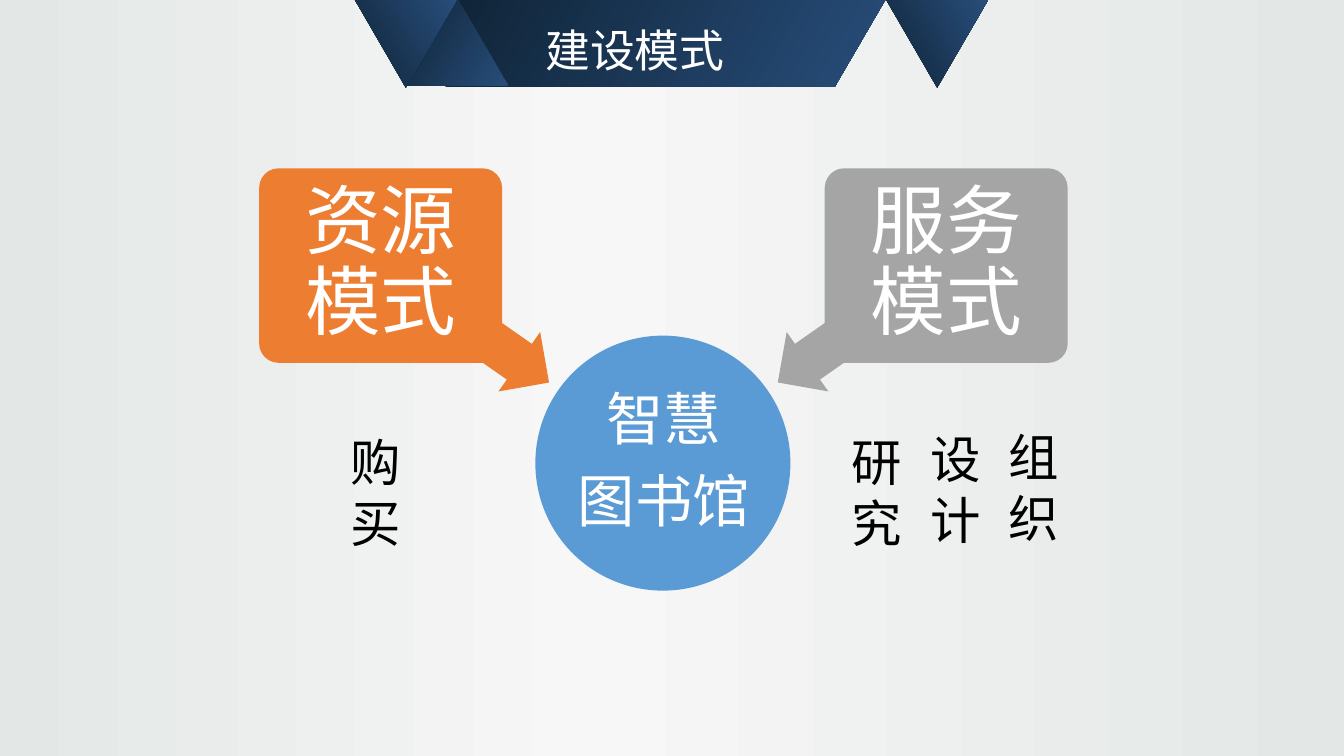
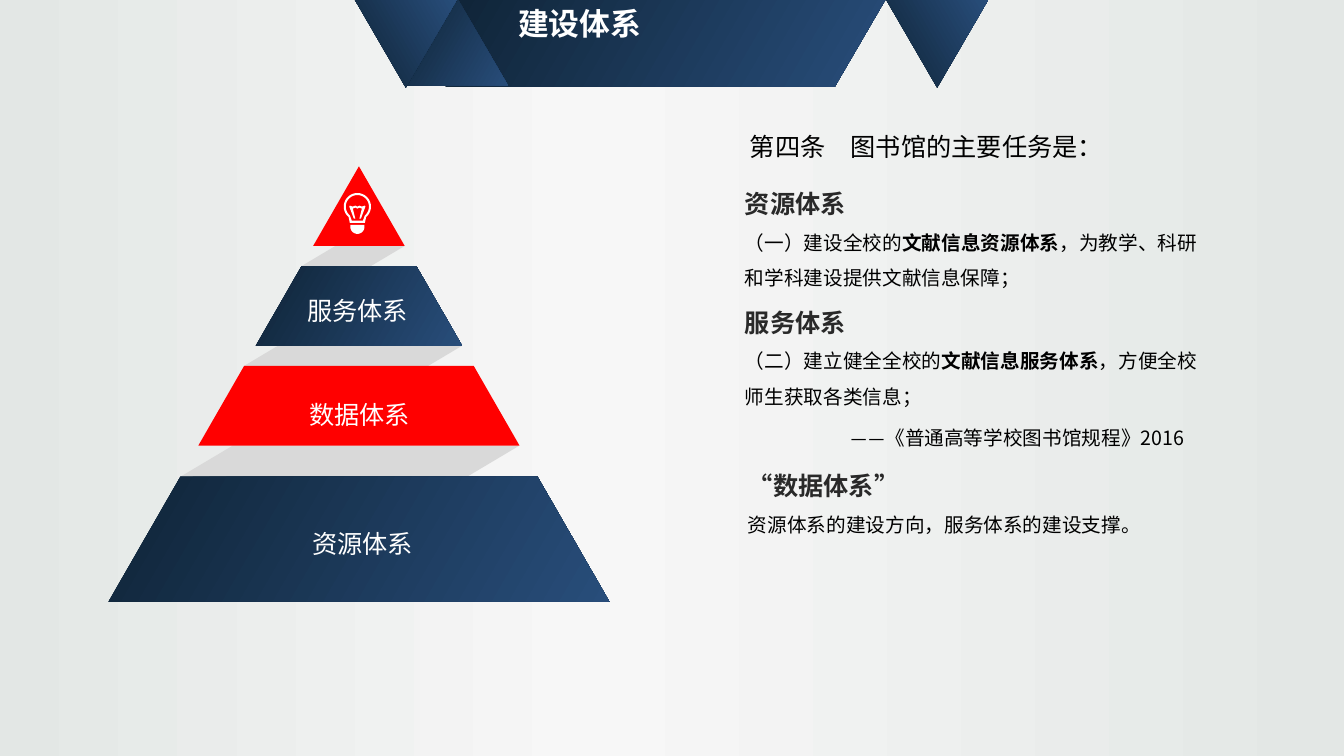
from copy import deepcopy
from dataclasses import dataclass
from math import cos, radians, sin

from lxml import etree
from pptx import Presentation
from pptx import util as u
from pptx.dml.color import RGBColor
from pptx.enum import shapes, text
from pptx.oxml import ns

Point = tuple[float, float]
Box = tuple[float, float, float, float]


@dataclass(frozen=True)
class Theme:
    navy: tuple[str, str] = ("0F2437", "284D7A")
    edge: str = "E3E7E5"
    glow: str = "F7F7F7"
    white: str = "FFFFFF"
    black: str = "000000"
    heading: str = "292929"
    red: str = "FF0000"
    ribbon: str = "D9D9D9"
    blue: str = "5B9BD5"
    orange: str = "ED7D31"
    gray: str = "A5A5A5"
    latin: str = "Arial"
    label_font: str = "Calibri"
    heading_font: str = "Noto Sans CJK JP"
    note_font: str = "Noto Sans CJK SC"
    asian: str = "Calibri"
    mode_size: int = 54
    hub_size: int = 41
    column_size: int = 36
    title_size: int = 32
    small_title_size: int = 22
    label_size: int = 18
    body_size: int = 14


THEME = Theme()


@dataclass(frozen=True)
class Line:
    """One paragraph; text between asterisks is bold."""
    words: str
    size: int
    color: str = THEME.black
    font: str = THEME.latin
    asian: str = THEME.asian
    bold: bool = False
    spacing: float | None = None
    after: float = 0
    centered: bool = False


@dataclass(frozen=True)
class Mode:
    name: str
    color: str
    left: float
    arrow_left: float
    arrow_turn: int


@dataclass(frozen=True)
class Tier:
    top: float
    bottom: float
    fill: str | tuple[str, str]


@dataclass(frozen=True)
class Label:
    words: str
    left: float
    top: float
    width: float


# Fills and shapes
def set_gradient(fill, colors: tuple[str, ...], angle: int) -> None:
    fill.gradient()
    fill.gradient_angle = angle
    for stop, color in zip(fill.gradient_stops, colors):
        stop.color.rgb = RGBColor.from_string(color)


def paint(shape, color: str | tuple[str, str]) -> None:
    shape.shadow.inherit = False
    shape.line.fill.background()
    if isinstance(color, tuple):
        set_gradient(shape.fill, color, 330)
    else:
        shape.fill.solid()
        shape.fill.fore_color.rgb = RGBColor.from_string(color)


def add_preset(slide, kind, box: Box, color: str | tuple[str, str]):
    shape = slide.shapes.add_shape(kind, *map(u.Inches, box))
    paint(shape, color)
    return shape


def add_outline(slide, contours: list[list[Point]], color: str | tuple[str, str]) -> None:
    contours = [[(u.Inches(x), u.Inches(y)) for x, y in contour] for contour in contours]
    builder = slide.shapes.build_freeform(*contours[0][0])
    builder.add_line_segments(contours[0][1:], close=True)
    for contour in contours[1:]:
        builder.move_to(*contour[0])
        builder.add_line_segments(contour[1:], close=True)
    paint(builder.convert_to_shape(), color)


# Text
def add_text(slide, box: Box, lines: list[Line], middle: bool = False,
             inset: float | None = None) -> None:
    frame = slide.shapes.add_textbox(*map(u.Inches, box)).text_frame
    frame.word_wrap = True
    if middle:
        frame.vertical_anchor = text.MSO_ANCHOR.MIDDLE
    if inset is not None:
        frame.margin_left = frame.margin_right = u.Inches(inset)
        frame.margin_top = frame.margin_bottom = u.Inches(inset)
    for index, line in enumerate(lines):
        paragraph = frame.add_paragraph() if index else frame.paragraphs[0]
        if line.centered:
            paragraph.alignment = text.PP_ALIGN.CENTER
        if line.spacing:
            paragraph.line_spacing = line.spacing
        if line.after:
            paragraph.space_after = u.Pt(line.after)
        font = paragraph.font
        font.size = u.Pt(line.size)
        font.bold = line.bold
        font.color.rgb = RGBColor.from_string(line.color)
        font.name = line.font
        latin = paragraph._p.find(".//" + ns.qn("a:latin"))
        asian = etree.Element(ns.qn("a:ea"), typeface=line.asian)
        latin.addnext(asian)
        for part, words in enumerate(line.words.split("*")):
            run = paragraph.add_run()
            run.text = words
            if part % 2:
                run.font.bold = True


# Shared background and title band
def add_base(presentation):
    slide = presentation.slides.add_slide(presentation.slide_layouts[6])
    fill = slide.background.fill
    fill.gradient()
    stop_list = slide._element.find(".//" + ns.qn("a:gsLst"))
    stop_list.append(deepcopy(stop_list[-1]))
    set_gradient_stops = zip(fill.gradient_stops, (0.01, 0.56, 1),
                             (THEME.edge, THEME.glow, THEME.edge))
    fill.gradient_angle = 180
    for stop, position, color in set_gradient_stops:
        stop.position = position
        stop.color.rgb = RGBColor.from_string(color)

    add_outline(slide, [[(4.42, 0), (8.78, 0), (8.28, 0.86), (4.42, 0.86)]], THEME.navy)
    for left, top, flipped in ((4.03, -0.02, False), (3.52, 0, True), (8.79, 0, True)):
        triangle = add_preset(slide, shapes.MSO_SHAPE.ISOSCELES_TRIANGLE,
                              (left, top, 1.01, 0.87), THEME.navy)
        if flipped:
            triangle._element.spPr.xfrm.set("flipV", "1")
    return slide


# Slide 1: two modes leading to the library
MODES = (
    Mode("资源模式", THEME.orange, 2.57, 3.59, 215),
    Mode("服务模式", THEME.gray, 8.18, 7.53, 325),
)
COLUMNS = (
    Label("购买", 3.38, 4.23, 1.01),
    Label("研究", 8.35, 4.23, 0.96),
    Label("设计", 9.13, 4.20, 0.80),
    Label("组织", 9.90, 4.18, 0.98),
)


def diagram_line(words: str, size: int) -> Line:
    return Line(words, size, THEME.white, spacing=0.9, after=round(size * 0.35), centered=True)


def add_mode(slide, mode: Mode) -> None:
    arrow = add_preset(slide, shapes.MSO_SHAPE.LEFT_ARROW,
                       (mode.arrow_left, 2.85, 2.04, 0.72), mode.color)
    arrow.adjustments[0], arrow.adjustments[1] = 0.6, 0.5
    arrow.rotation = mode.arrow_turn
    card = add_preset(slide, shapes.MSO_SHAPE.ROUNDED_RECTANGLE,
                      (mode.left, 1.67, 2.41, 1.93), mode.color)
    card.adjustments[0] = 0.1
    add_text(slide, (mode.left + 0.06, 1.72, 2.29, 1.81),
             [diagram_line(mode.name, THEME.mode_size)], middle=True, inset=0.11)


def add_modes_slide(presentation) -> None:
    slide = add_base(presentation)
    add_preset(slide, shapes.MSO_SHAPE.OVAL, (5.31, 3.33, 2.53, 2.53), THEME.blue)
    add_text(slide, (5.69, 3.7, 1.79, 1.79),
             [diagram_line(words, THEME.hub_size) for words in ("智慧", "图书馆")],
             middle=True, inset=0.03)
    for mode in MODES:
        add_mode(slide, mode)
    add_text(slide, (5.31, 0.18, 2.26, 0.64), [Line("建设模式", THEME.title_size, THEME.white)])
    for column in COLUMNS:
        add_text(slide, (column.left, column.top, column.width, 1.31),
                 [Line(column.words, THEME.column_size)])


# Slide 2: pyramid of systems
APEX_X, APEX_Y = 3.56, 1.65
SIDE_SLOPE = 0.575
RIBBON_SLOPE = 1.68
TIERS = (
    Tier(1.65, 2.44, THEME.red),
    Tier(2.64, 3.43, THEME.navy),
    Tier(3.63, 4.42, THEME.red),
    Tier(4.73, 5.97, THEME.navy),
)
TIER_LABELS = (
    Label("服务体系", 2.95, 2.88, 1.23),
    Label("数据体系", 2.97, 3.91, 1.23),
    Label("资源体系", 3.00, 5.19, 1.23),
)


def half_width(y: float) -> float:
    return (y - APEX_Y) * SIDE_SLOPE


def add_pyramid(slide) -> None:
    for upper, lower in zip(TIERS, TIERS[1:]):
        right = APEX_X + half_width(upper.bottom)
        left = APEX_X - half_width(lower.top)
        shift = (lower.top - upper.bottom) * RIBBON_SLOPE
        add_outline(slide, [[(right, upper.bottom), (left + shift, upper.bottom),
                             (left, lower.top), (right - shift, lower.top)]], THEME.ribbon)
    for tier in TIERS:
        top, bottom = half_width(tier.top), half_width(tier.bottom)
        add_outline(slide, [[(APEX_X - top, tier.top), (APEX_X + top, tier.top),
                             (APEX_X + bottom, tier.bottom),
                             (APEX_X - bottom, tier.bottom)]], tier.fill)
    for label in TIER_LABELS:
        add_text(slide, (label.left, label.top, label.width, 0.71),
                 [Line(label.words, THEME.label_size, THEME.white, THEME.label_font)])


def arc(x: float, y: float, radius: float, start: int, end: int) -> list[Point]:
    return [(x + radius * cos(radians(angle)), y + radius * sin(radians(angle)))
            for angle in range(start, end + 1, 10)]


def add_bulb(slide) -> None:
    x, y = 3.545, 2.05
    glass = [arc(x, y, radius, 130, 410) + [(x + neck, foot), (x - neck, foot)]
             for radius, neck, foot in ((0.135, 0.075, 2.21), (0.115, 0.055, 2.19))]
    add_outline(slide, glass, THEME.white)
    add_outline(slide, [[(x - 0.07, 2.23), (x + 0.07, 2.23)] + arc(x, 2.25, 0.07, 0, 180)],
                THEME.white)
    half = [(0, 2.05), (0.02, 2.04), (0.045, 2.05), (0.075, 2.04), (0.08, 2.05),
            (0.035, 2.17), (0.02, 2.17), (0.045, 2.07), (0.02, 2.06), (0, 2.07)]
    filament = [(x + dx, y) for dx, y in half] + [(x - dx, y) for dx, y in reversed(half)]
    add_outline(slide, [filament], THEME.white)


def heading(words: str, **options) -> Line:
    return Line(words, THEME.label_size, THEME.heading, THEME.heading_font, bold=True, **options)


def body(words: str, font: str = THEME.latin) -> Line:
    return Line(words, THEME.body_size, font=font, spacing=1.5)


def add_systems_slide(presentation) -> None:
    slide = add_base(presentation)
    add_text(slide, (5.04, 0, 3.49, 0.47),
             [Line("建设体系", THEME.small_title_size, THEME.white, THEME.heading_font, bold=True)])
    add_pyramid(slide)
    add_bulb(slide)
    add_text(slide, (7.34, 1.25, 3.74, 0.4),
             [Line("第四条　图书馆的主要任务是：", THEME.label_size)])
    add_text(slide, (7.29, 1.82, 4.85, 1.65), [
        heading("资源体系"),
        body("（一）建设全校的*文献信息资源体系*，为教学、科研和学科建设提供文献信息保障；")])
    add_text(slide, (7.29, 3, 4.82, 1.41), [
        heading("服务体系"),
        body("（二）建立健全全校的*文献信息服务体系*，方便全校师生获取各类信息；")])
    add_text(slide, (8.33, 4.18, 3.92, 0.64),
             [Line("——《普通高等学校图书馆规程》2016", THEME.body_size, font=THEME.note_font)])
    add_text(slide, (7.32, 4.67, 4.82, 1.06), [
        heading("“数据体系”", asian=THEME.note_font, spacing=0.84),
        body("资源体系的建设方向，服务体系的建设支撑。", THEME.note_font)])


def main() -> None:
    presentation = Presentation()
    presentation.slide_width, presentation.slide_height = u.Inches(13.33), u.Inches(7.5)
    add_modes_slide(presentation)
    add_systems_slide(presentation)
    presentation.save("out.pptx")


if __name__ == "__main__":
    main()
